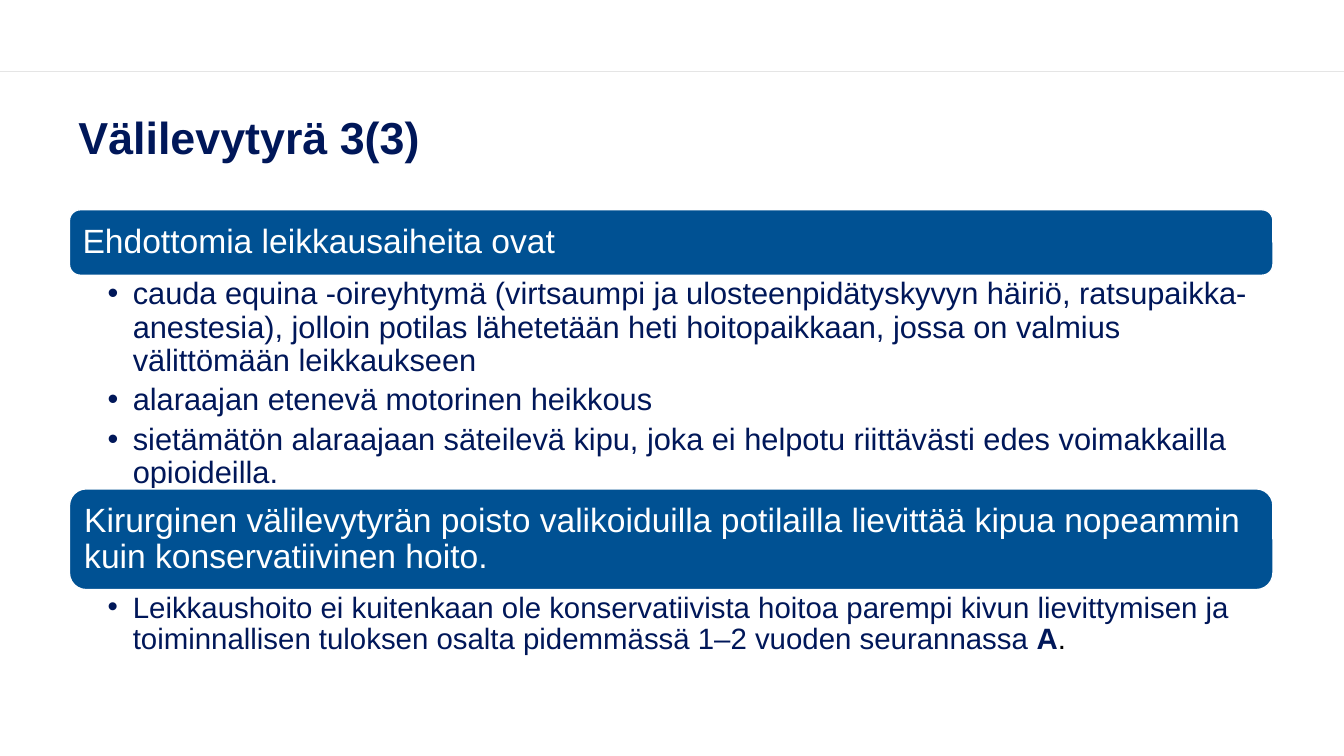
from pptx import Presentation
from pptx.dml.color import RGBColor
from pptx.enum.shapes import MSO_CONNECTOR, MSO_SHAPE
from pptx.enum.text import MSO_ANCHOR, PP_ALIGN
from pptx.oxml.ns import qn
from pptx.util import Pt
from lxml.etree import SubElement

NAVY = RGBColor(0x00, 0x17, 0x59)
BLUE = RGBColor(0x00, 0x51, 0x93)
WHITE = RGBColor(0xFF, 0xFF, 0xFF)
BLACK = RGBColor(0x00, 0x00, 0x00)
PALE_GREY = RGBColor(0xE5, 0xE5, 0xE5)

SLIDE_WIDTH, SLIDE_HEIGHT = 960, 540
LEFT, WIDTH = 49.6, 859.7


class SlideBuilder:
    font_name = "Arial"
    line_spacing = 0.9

    def __init__(self, slide):
        self.slide = slide

    def set_frame(self, frame, anchor, insets):
        frame.word_wrap = True
        frame.vertical_anchor = anchor
        frame.margin_left, frame.margin_top, frame.margin_right, frame.margin_bottom = map(Pt, insets)

    def style(self, paragraph, size, color, bold=False):
        paragraph.alignment = PP_ALIGN.LEFT
        paragraph.line_spacing = self.line_spacing
        for run in paragraph.runs:
            run.font.name = self.font_name
            run.font.size = Pt(size)
            run.font.bold = bold
            run.font.color.rgb = color

    def rule(self, y):
        divider = self.slide.shapes.add_connector(
            MSO_CONNECTOR.STRAIGHT, Pt(0), Pt(y), Pt(SLIDE_WIDTH), Pt(y))
        divider.line.color.rgb = PALE_GREY
        divider.line.width = Pt(1)
        SubElement(divider._element.spPr, qn("a:effectLst"))

    def title(self, text, top, height):
        heading = self.slide.shapes.add_textbox(Pt(LEFT - 0.6), Pt(top), Pt(WIDTH), Pt(height))
        self.set_frame(heading.text_frame, MSO_ANCHOR.MIDDLE, (7.2, 3.6, 7.2, 3.6))
        heading.text_frame.text = text
        self.style(heading.text_frame.paragraphs[0], 32, NAVY, bold=True)

    def banner(self, text, top, height):
        banner = self.slide.shapes.add_shape(
            MSO_SHAPE.ROUNDED_RECTANGLE, Pt(LEFT), Pt(top), Pt(WIDTH), Pt(height))
        banner.shadow.inherit = False
        banner.fill.solid()
        banner.fill.fore_color.rgb = BLUE
        banner.line.color.rgb = WHITE
        banner.line.width = Pt(1)
        self.set_frame(banner.text_frame, MSO_ANCHOR.MIDDLE, (7.2,) * 4)
        banner.text_frame.text = text
        self.style(banner.text_frame.paragraphs[0], 24, WHITE)

    def bullets(self, items, top, height, size):
        points = self.slide.shapes.add_textbox(Pt(LEFT), Pt(top), Pt(WIDTH), Pt(height))
        frame = points.text_frame
        self.set_frame(frame, MSO_ANCHOR.TOP, (27.3, 2.2, 12, 2.2))
        frame.text = "\n".join(items)
        for paragraph in frame.paragraphs:
            properties = paragraph._p.get_or_add_pPr()
            properties.set("marL", str(Pt(18)))
            properties.set("indent", str(-Pt(18)))
            SubElement(properties, qn("a:buFont"), typeface=self.font_name)
            SubElement(properties, qn("a:buChar"), char="•")
            paragraph.space_after = Pt(size * 0.2)
            self.style(paragraph, size, NAVY)
        return frame

    def add_run(self, paragraph, text, size, color, bold=False):
        run = paragraph.add_run()
        run.text = text
        self.style(paragraph, size, NAVY)
        run.font.color.rgb = color
        run.font.bold = bold
        return run


def main():
    presentation = Presentation()
    presentation.slide_width = Pt(SLIDE_WIDTH)
    presentation.slide_height = Pt(SLIDE_HEIGHT)
    builder = SlideBuilder(presentation.slides.add_slide(presentation.slide_layouts[6]))

    builder.rule(51)
    builder.title("Välilevytyrä 3(3)", 67, 65.5)

    builder.banner("Ehdottomia leikkausaiheita ovat", 149.8, 46.8)
    builder.bullets([
        "cauda equina -oireyhtymä (virtsaumpi ja ulosteenpidätyskyvyn häiriö, "
        "ratsupaikka-anestesia), jolloin potilas lähetetään heti hoitopaikkaan, "
        "jossa on valmius välittömään leikkaukseen",
        "alaraajan etenevä motorinen heikkous",
        "sietämätön alaraajaan säteilevä kipu, joka ei helpotu riittävästi edes "
        "voimakkailla opioideilla.",
    ], 196.6, 152.6, 22)

    builder.banner(
        "Kirurginen välilevytyrän poisto valikoiduilla potilailla lievittää kipua "
        "nopeammin kuin konservatiivinen hoito.", 349.2, 72)
    outcome = builder.bullets([
        "Leikkaushoito ei kuitenkaan ole konservatiivista hoitoa parempi kivun "
        "lievittymisen ja toiminnallisen tuloksen osalta pidemmässä 1–2 vuoden "
        "seurannassa ",
    ], 421.2, 51.1, 21).paragraphs[0]
    evidence_grade = builder.add_run(outcome, "A", 21, NAVY)
    builder.add_run(outcome, ".", 21, BLACK)
    evidence_grade.font.bold = True

    presentation.save("out.pptx")


if __name__ == "__main__":
    main()
